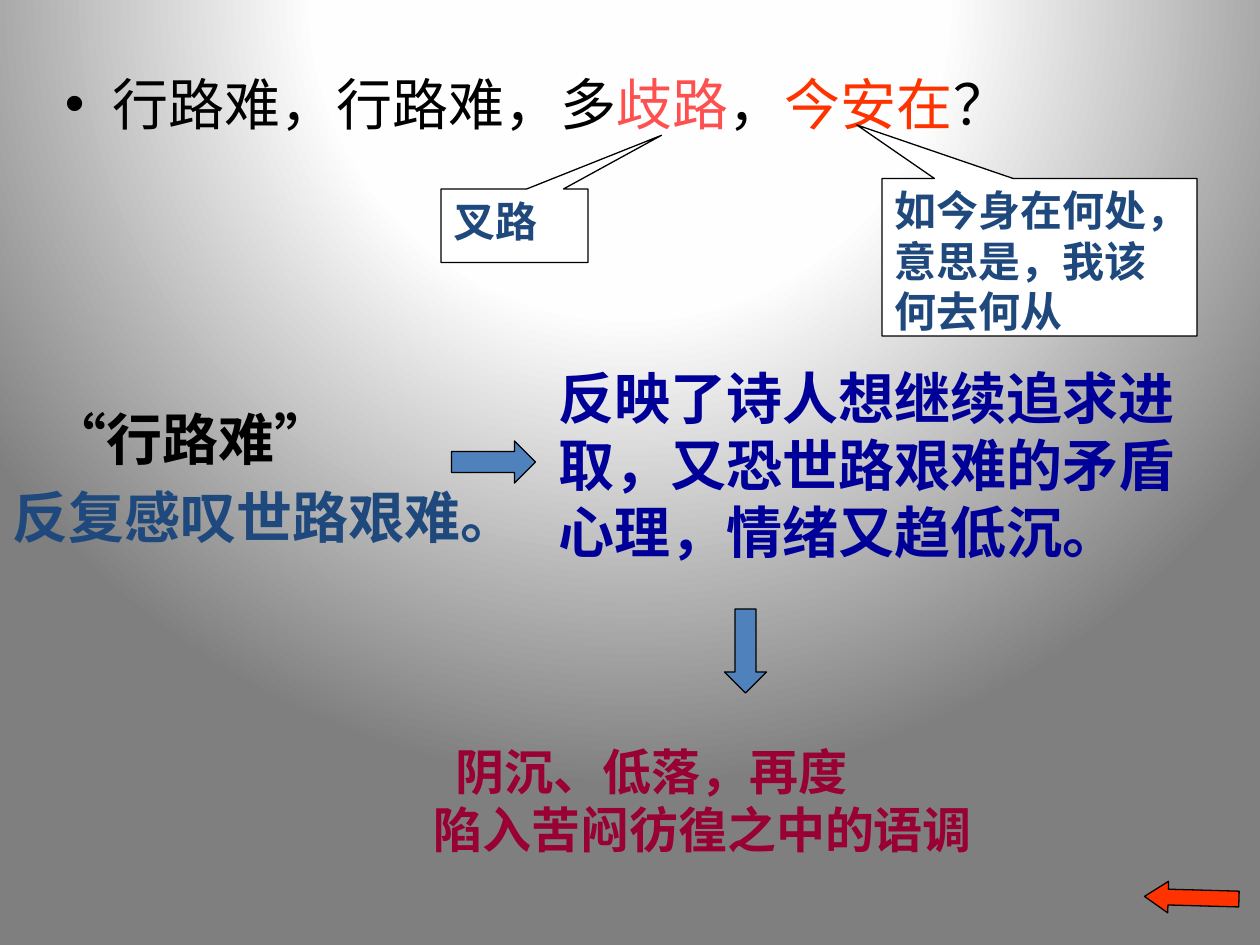
import pptx
import pptx.util
import pptx.dml.color
import pptx.enum.dml
import pptx.enum.lang
import pptx.enum.shapes
import pptx.enum.text
import pptx.oxml
from lxml import etree
from pptx.oxml.ns import qn

Pt = pptx.util.Pt
SHAPES = pptx.enum.shapes.MSO_SHAPE
SANS, LATIN = "Noto Sans CJK SC", "Arial"
BLACK, SLATE, NAVY, WINE = "000000", "1F497D", "000099", "990033"

BACKDROP = [(0, "FFFFFF"), (40, "FEFEFE"), (100, "7F7F7F")]
BACKDROP_FOCUS = {"l": 50, "t": -80, "r": 50, "b": 180}

VERSE = [
    ("行路难，行路难，多", BLACK),
    ("歧路", "FF5050"),
    ("，", BLACK),
    ("今安在", "FF3300"),
    ("？", BLACK),
]

CALLOUTS = [
    ("叉路", (252, 108, 84, 42), (1, -1.23)),
    ("如今身在何处，意思是，我该何去何从", (504, 102, 180, 90), (-0.58, -0.84)),
]

READINGS = [
    {"box": (0, 222, 276, 96), "size": 32, "spacing": 1.15,
     "lines": [("“行路难”", LATIN, BLACK, 21.5), ("反复感叹世路艰难。", SANS, SLATE, 0)]},
    {"box": (312, 204, 372, 122), "size": 32, "spacing": 1,
     "lines": [("反映了诗人想继续追求进取，又恐世路艰难的矛盾心理，情绪又趋低沉。", SANS, NAVY, 0)]},
    {"box": (228, 420, 358.5, 74), "size": 28, "spacing": 1,
     "lines": [("阴沉、低落，再度", SANS, WINE, 25.4), ("陷入苦闷彷徨之中的语调", SANS, WINE, 12.7)]},
]

ARROWS = [
    ((258, 252, 48, 24), 0, (0.5, 0.5), "4F81BD"),
    ((402, 360, 48, 24), 90, (0.5, 0.5), "4F81BD"),
    ((654, 504, 54, 18), 181.6, (0.5, 0.75), "FF3300"),
]


def color(value):
    return pptx.dml.color.RGBColor.from_string(value)


def paint_backdrop(slide):
    fill = slide.background.fill
    fill.gradient()
    gradient = slide.background._cSld.find(".//" + qn("a:gradFill"))
    for part in list(gradient):
        gradient.remove(part)
    stops = etree.SubElement(gradient, qn("a:gsLst"))
    for position, value in BACKDROP:
        stop = etree.SubElement(stops, qn("a:gs"), pos=str(position * 1000))
        etree.SubElement(stop, qn("a:srgbClr"), val=value)
    circle = etree.SubElement(gradient, qn("a:path"))
    circle.set("path", "circle")
    focus = {side: str(share * 1000) for side, share in BACKDROP_FOCUS.items()}
    etree.SubElement(circle, qn("a:fillToRect"), **focus)


def add_run(paragraph, wording, font_name, size, value, bold):
    run = paragraph.add_run()
    run.text = wording
    font = run.font
    font.name, font.size, font.bold = font_name, Pt(size), bold
    font.color.rgb = color(value)
    font.language_id = pptx.enum.lang.MSO_LANGUAGE_ID.SIMPLIFIED_CHINESE
    latin = run._r.rPr.find(qn("a:latin"))
    east_asian = etree.Element(qn("a:ea"), typeface=SANS)
    latin.addnext(east_asian)


def lay_out(paragraph, size, spacing=1, margin=0, indent=0):
    paragraph.alignment = pptx.enum.text.PP_ALIGN.LEFT
    paragraph.line_spacing = Pt(round(size * 1.2 * spacing, 1))
    properties = paragraph._p.get_or_add_pPr()
    properties.set("marL", str(Pt(margin)))
    properties.set("indent", str(Pt(indent)))
    return properties


def prepare_frame(frame):
    frame.word_wrap = True
    frame.vertical_anchor = pptx.enum.text.MSO_ANCHOR.TOP
    return frame


def add_text_area(slide, box):
    return prepare_frame(slide.shapes.add_textbox(*map(Pt, box)).text_frame)


def add_outlined(slide, kind, box, adjustments, value):
    shape = slide.shapes.add_shape(kind, *map(Pt, box))
    shape.shadow.inherit = False
    for index, amount in enumerate(adjustments):
        shape.adjustments[index] = amount
    shape.fill.solid()
    shape.fill.fore_color.rgb = color(value)
    shape.line.color.rgb = color(BLACK)
    shape.line.width = Pt(0.75)
    return shape


def add_verse(slide):
    paragraph = add_text_area(slide, (30, 36, 654, 446.4)).paragraphs[0]
    properties = lay_out(paragraph, 32, margin=27, indent=-27)
    etree.SubElement(properties, qn("a:buFont"), typeface=LATIN)
    etree.SubElement(properties, qn("a:buChar"), char="•")
    for wording, value in VERSE:
        add_run(paragraph, wording, SANS, 32, value, False)


def add_callout(slide, wording, box, tip):
    callout = add_outlined(slide, SHAPES.RECTANGULAR_CALLOUT, box, tip, "FFFFFF")
    paragraph = prepare_frame(callout.text_frame).paragraphs[0]
    lay_out(paragraph, 24)
    add_run(paragraph, wording, LATIN, 24, SLATE, True)


def add_reading(slide, reading):
    frame = add_text_area(slide, reading["box"])
    for index, (wording, font_name, value, margin) in enumerate(reading["lines"]):
        paragraph = frame.add_paragraph() if index else frame.paragraphs[0]
        lay_out(paragraph, reading["size"], reading["spacing"], margin)
        add_run(paragraph, wording, font_name, reading["size"], value, True)


def main():
    deck = pptx.Presentation()
    deck.slide_width, deck.slide_height = Pt(720), Pt(540)
    slide = deck.slides.add_slide(deck.slide_layouts[6])
    paint_backdrop(slide)
    add_verse(slide)
    for callout in CALLOUTS:
        add_callout(slide, *callout)
    for reading in READINGS:
        add_reading(slide, reading)
    for box, turn, adjustments, value in ARROWS:
        add_outlined(slide, SHAPES.RIGHT_ARROW, box, adjustments, value).rotation = turn
    deck.save("out.pptx")


if __name__ == "__main__":
    main()
